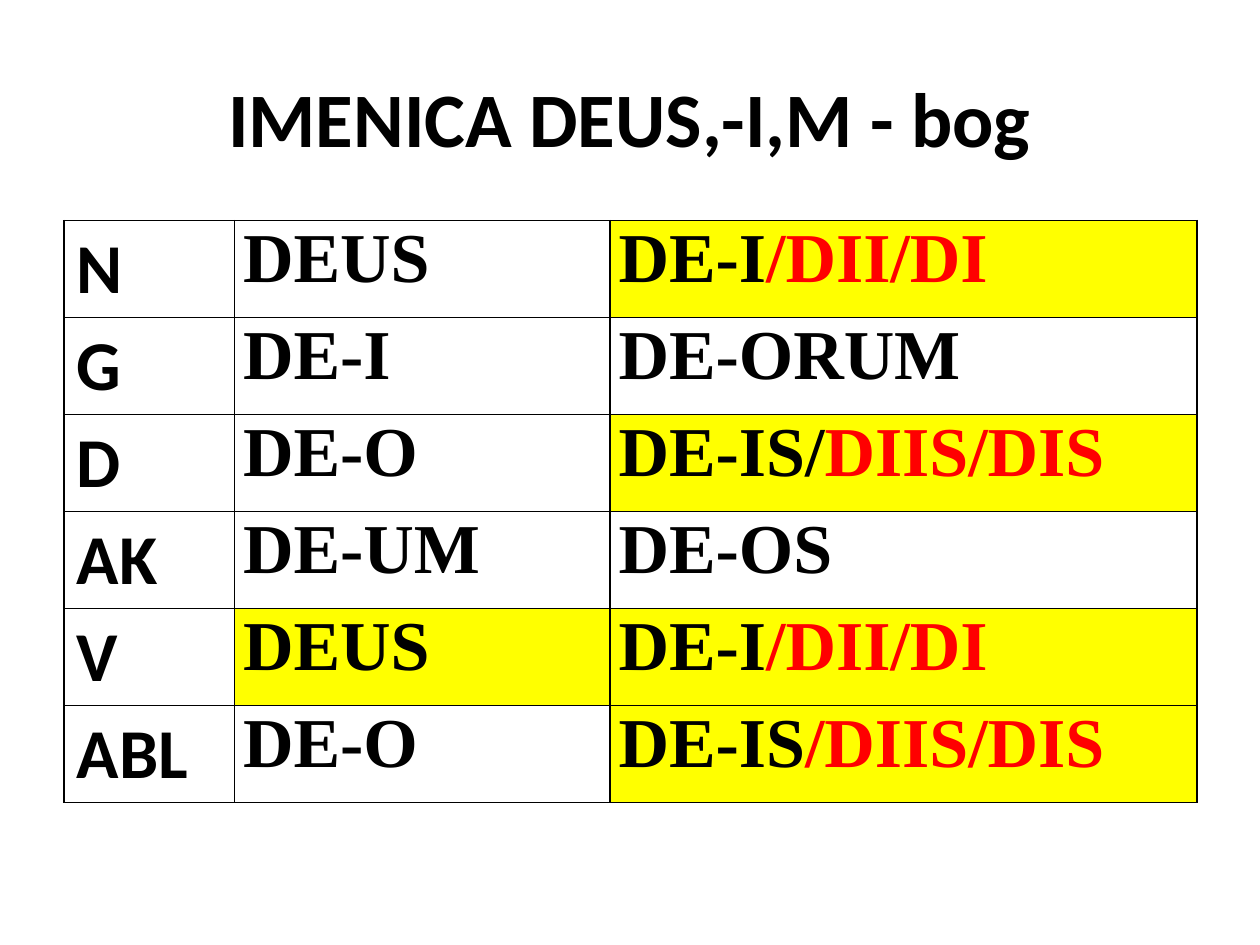
from dataclasses import dataclass

from lxml import etree
from pptx import Presentation
from pptx.dml.color import RGBColor
from pptx.enum.text import MSO_ANCHOR, PP_ALIGN
from pptx.oxml.ns import qn
from pptx.util import Inches, Pt

CENTER = PP_ALIGN.CENTER
MIDDLE = MSO_ANCHOR.MIDDLE

BLACK = RGBColor(0x00, 0x00, 0x00)
RED = RGBColor(0xFF, 0x00, 0x00)
YELLOW = RGBColor(0xFF, 0xFF, 0x00)

SANS = "Calibri"
SERIF = "Times New Roman"
COL_WIDTHS = (1.35, 2.98, 4.66)
ROW_HEIGHT = 0.77


@dataclass
class Declension:
    case: str
    singular: str
    plural: str
    variants: str = ""  # irregular plural forms, shown in red
    mark_singular: bool = False


DECLENSIONS = [
    Declension("N", "DEUS", "DE-I", "/DII/DI"),
    Declension("G", "DE-I", "DE-ORUM"),
    Declension("D", "DE-O", "DE-IS/", "DIIS/DIS"),
    Declension("AK", "DE-UM", "DE-OS"),
    Declension("V", "DEUS", "DE-I", "/DII/DI", mark_singular=True),
    Declension("ABL", "DE-O", "DE-IS", "/DIIS/DIS"),
]


def add_run(p, text: str, size: int, font: str, color: RGBColor = BLACK) -> None:
    r = p.add_run()
    r.text = text
    r.font.size = Pt(size)
    r.font.name = font
    r.font.bold = True
    r.font.color.rgb = color


def set_borders(cell) -> None:
    tc_pr = cell._tc.get_or_add_tcPr()
    for i, side in enumerate(("lnL", "lnR", "lnT", "lnB")):
        ln = etree.Element(qn(f"a:{side}"), w=str(Pt(1)))
        fill = etree.SubElement(ln, qn("a:solidFill"))
        etree.SubElement(fill, qn("a:srgbClr"), val=str(BLACK))
        tc_pr.insert(i, ln)


def fill_cell(cell, text: str, font: str, variants: str = "",
              marked: bool = False) -> None:
    p = cell.text_frame.paragraphs[0]
    add_run(p, text, 40, font)
    if variants:
        add_run(p, variants, 40, font, RED)
    if font == SERIF:
        cell.margin_left = cell.margin_right = Inches(0.07)
        cell.margin_top = cell.margin_bottom = Inches(0)
    if marked:
        cell.fill.solid()
        cell.fill.fore_color.rgb = YELLOW
    else:
        cell.fill.background()
    set_borders(cell)


def add_title(slide, text: str) -> None:
    sp = slide.shapes.add_textbox(Inches(0.5), Inches(0.3), Inches(9), Inches(1.25))
    tf = sp.text_frame
    tf.word_wrap = True
    tf.vertical_anchor = MIDDLE
    p = tf.paragraphs[0]
    p.alignment = CENTER
    add_run(p, text, 44, SANS)


def add_declension_table(slide, rows: list[Declension]) -> None:
    table = slide.shapes.add_table(
        len(rows), len(COL_WIDTHS), Inches(0.51), Inches(1.75),
        Inches(sum(COL_WIDTHS)), Inches(ROW_HEIGHT * len(rows))).table
    table.first_row = False
    table.horz_banding = False
    for column, width in zip(table.columns, COL_WIDTHS):
        column.width = Inches(width)
    for i, d in enumerate(rows):
        table.rows[i].height = Inches(ROW_HEIGHT)
        fill_cell(table.cell(i, 0), d.case, SANS)
        fill_cell(table.cell(i, 1), d.singular, SERIF, marked=d.mark_singular)
        fill_cell(table.cell(i, 2), d.plural, SERIF, d.variants, bool(d.variants))


def main() -> None:
    prs = Presentation()
    prs.slide_width, prs.slide_height = Inches(10), Inches(7.5)
    slide = prs.slides.add_slide(prs.slide_layouts[6])

    # Heading
    add_title(slide, "IMENICA DEUS,-I,M - bog")

    # Cases with singular and plural forms
    add_declension_table(slide, DECLENSIONS)

    prs.save("out.pptx")


if __name__ == "__main__":
    main()
